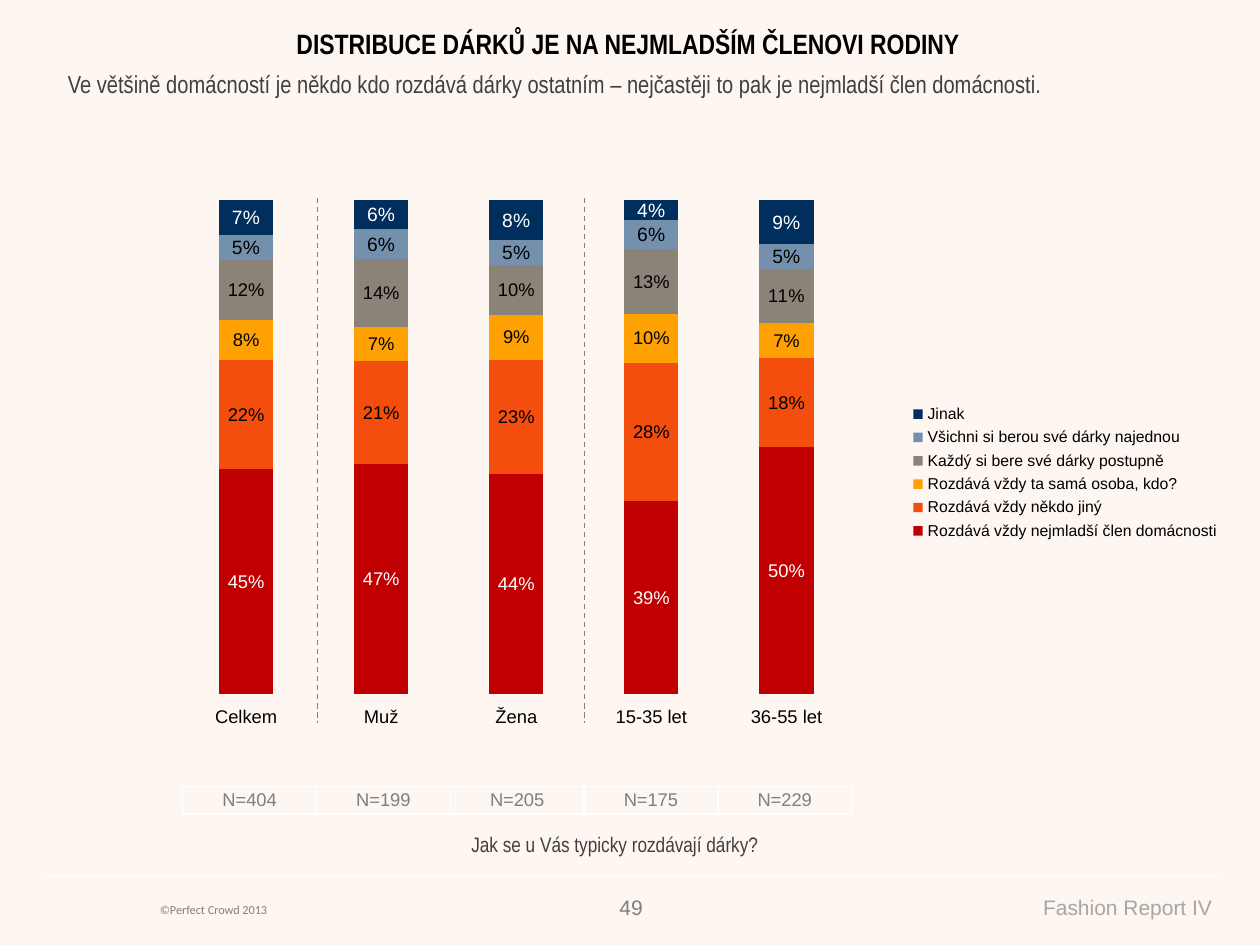
from dataclasses import dataclass

from lxml import etree
from pptx import Presentation
from pptx.chart.data import CategoryChartData
from pptx.dml.color import RGBColor
from pptx.enum.chart import (XL_CHART_TYPE, XL_LABEL_POSITION, XL_LEGEND_POSITION,
                             XL_TICK_LABEL_POSITION, XL_TICK_MARK)
from pptx.enum.dml import MSO_LINE
from pptx.enum.shapes import MSO_CONNECTOR
from pptx.enum.text import MSO_ANCHOR, PP_ALIGN
from pptx.oxml import parse_xml
from pptx.oxml.ns import nsdecls, qn
from pptx.util import Inches, Pt


@dataclass(frozen=True)
class Theme:
    background: str = "FEF6F0"
    white: str = "FFFFFF"
    black: str = "000000"
    body: str = "404040"
    gray: str = "808080"
    sample: str = "7F7F7F"
    pale: str = "A6A6A6"
    sans: str = "Arial"
    narrow: str = "Arial Narrow"
    footer: str = "Calibri"
    title_size: float = 16
    lead_size: float = 14
    text_size: float = 12
    large_label_size: float = 11
    label_size: float = 10.5
    legend_size: float = 9
    copyright_size: float = 7
    line_width: float = 0.75


theme = Theme()
presentation = Presentation()
presentation.slide_width = Inches(10)
presentation.slide_height = Inches(7.5)
column = presentation.slide_width / 100
row = presentation.slide_height / 100
slide = presentation.slides.add_slide(presentation.slide_layouts[6])
slide.background.fill.solid()
slide.background.fill.fore_color.rgb = RGBColor.from_string(theme.background)


def place(left, top, width, height):
    return int(left * column), int(top * row), int(width * column), int(height * row)


def style(font, size, color, name=theme.sans, bold=False):
    font.size = Pt(size)
    font.name = name
    font.bold = bold
    font.color.rgb = RGBColor.from_string(color)


categories = ["Celkem", "Muž", "Žena", "15-35 let", "36-55 let"]
answers = [
    ("Rozdává vždy nejmladší člen domácnosti", (45, 47, 44, 39, 50), "C00000", theme.white, theme.label_size),
    ("Rozdává vždy někdo jiný", (22, 21, 23, 28, 18), "F34E0D", theme.black, theme.label_size),
    ("Rozdává vždy ta samá osoba, kdo?", (8, 7, 9, 10, 7), "FFA102", theme.black, theme.label_size),
    ("Každý si bere své dárky postupně", (12, 14, 10, 13, 11), "8B8278", theme.black, theme.label_size),
    ("Všichni si berou své dárky najednou", (5, 6, 5, 6, 5), "7391AD", theme.black, theme.large_label_size),
    ("Jinak", (7, 6, 8, 4, 9), "002F5E", theme.white, theme.large_label_size),
]
chart_data = CategoryChartData(number_format="0")
chart_data.categories = categories
for name, values, *_ in answers:
    chart_data.add_series(name, values)
chart = slide.shapes.add_chart(
    XL_CHART_TYPE.COLUMN_STACKED_100, *place(12.3, 17.6, 85.5, 64.8), chart_data).chart
style(chart.font, theme.text_size, theme.black)
chart.has_title = False
chart.has_legend = True
chart.legend.position = XL_LEGEND_POSITION.RIGHT
chart.legend.include_in_layout = False
style(chart.legend.font, theme.legend_size, theme.black)
chart.value_axis.visible = False
chart.value_axis.has_major_gridlines = False
category_axis = chart.category_axis
category_axis.tick_label_position = XL_TICK_LABEL_POSITION.LOW
category_axis.major_tick_mark = XL_TICK_MARK.OUTSIDE
category_axis.format.line.fill.background()
style(category_axis.tick_labels.font, theme.label_size, theme.black)

plot = chart.plots[0]
plot.gap_width = 150
plot.overlap = 100
plot.vary_by_categories = False
for series, (name, values, color, label_color, label_size) in zip(plot.series, answers):
    series.format.fill.solid()
    series.format.fill.fore_color.rgb = RGBColor.from_string(color)
    labels = series.data_labels
    labels.show_value = True
    labels.position = XL_LABEL_POSITION.CENTER
    labels.number_format = '#,##0"%"'
    labels.number_format_is_linked = False
    style(labels.font, label_size, label_color)

plot_area = chart.element.find(".//" + qn("c:plotArea"))
for layout in plot_area.findall(qn("c:layout")):
    plot_area.remove(layout)
plot_area.insert(0, parse_xml(
    f'<c:layout {nsdecls("c")}><c:manualLayout><c:layoutTarget val="inner"/>'
    '<c:xMode val="edge"/><c:yMode val="edge"/><c:x val="0.022"/><c:y val="0.055"/>'
    '<c:w val="0.627"/><c:h val="0.807"/></c:manualLayout></c:layout>'))

lines = [
    (3.3, 92.67, 96.7, 92.67, theme.white, None),
    (25.2, 20.93, 25.2, 76.53, theme.gray, MSO_LINE.DASH),
    (46.4, 20.93, 46.4, 76.53, theme.gray, MSO_LINE.DASH),
]
for left, top, right, bottom, color, dash in lines:
    line = slide.shapes.add_connector(
        MSO_CONNECTOR.STRAIGHT, *place(left, top, right, bottom))
    line.line.color.rgb = RGBColor.from_string(color)
    line.line.width = Pt(theme.line_width)
    line.line.dash_style = dash
    etree.SubElement(line.element.spPr, qn("a:effectLst"))

texts = [
    ("DISTRIBUCE DÁRKŮ JE NA NEJMLADŠÍM ČLENOVI RODINY", (5.6, 2.13, 88.5, 4.93),
     PP_ALIGN.CENTER, theme.title_size, theme.black, theme.narrow, True),
    ("Ve většině domácností je někdo kdo rozdává dárky ostatním – nejčastěji to pak je nejmladší člen domácnosti.",
     (4.4, 6.67, 93.4, 9.73), PP_ALIGN.LEFT, theme.lead_size, theme.body, theme.narrow, False),
    ("Jak se u Vás typicky rozdávají dárky?", (3.5, 87.33, 90.6, 4),
     PP_ALIGN.CENTER, theme.text_size, theme.body, theme.narrow, False),
    ("©Perfect Crowd 2013", (11.7, 94.8, 29.1, 2.93),
     PP_ALIGN.LEFT, theme.copyright_size, theme.gray, theme.footer, False),
    ("49", (47.9, 94, 4.1, 4),
     PP_ALIGN.RIGHT, theme.text_size, theme.gray, theme.sans, False),
    ("Fashion Report IV", (60.1, 94, 37.1, 4),
     PP_ALIGN.RIGHT, theme.text_size, theme.pale, theme.sans, False),
]
for text, area, alignment, size, color, font_name, bold in texts:
    text_frame = slide.shapes.add_textbox(*place(*area)).text_frame
    text_frame.word_wrap = True
    text_frame.text = text
    paragraph = text_frame.paragraphs[0]
    paragraph.alignment = alignment
    style(paragraph.runs[0].font, size, color, font_name, bold)

samples = [404, 199, 205, 175, 229]
table = slide.shapes.add_table(1, len(samples), *place(14.5, 83.2, 53.1, 2.93)).table
table.first_row = False
table.horz_banding = False
for index, sample in enumerate(samples):
    cell = table.cell(0, index)
    cell.fill.background()
    cell.margin_left = cell.margin_right = cell.margin_top = cell.margin_bottom = 0
    cell.vertical_anchor = MSO_ANCHOR.MIDDLE
    cell.text_frame.text = f"N={sample}"
    paragraph = cell.text_frame.paragraphs[0]
    paragraph.alignment = PP_ALIGN.CENTER
    style(paragraph.runs[0].font, theme.label_size, theme.sample)

presentation.save("out.pptx")
